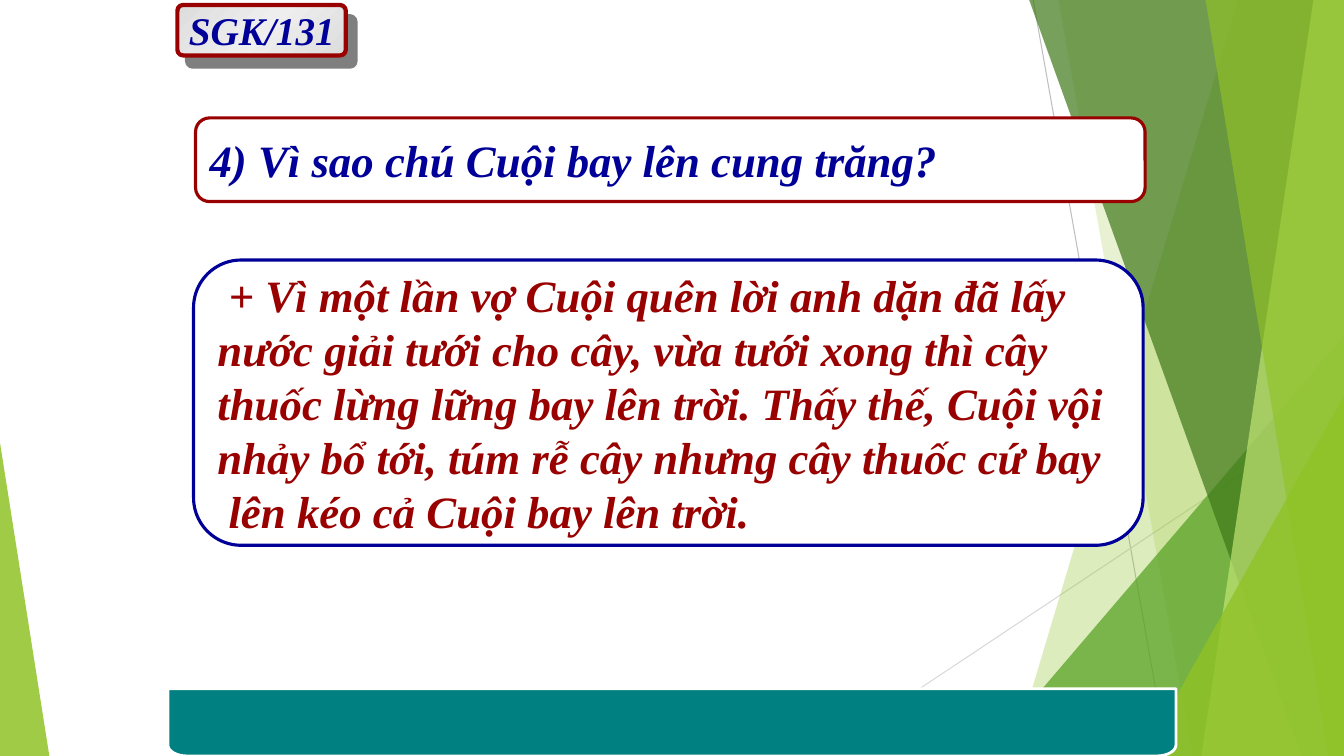
from dataclasses import dataclass
from math import cos, pi, sin
from typing import Optional, Union

from lxml.etree import SubElement
from pptx import Presentation
from pptx.dml.color import RGBColor as RGB
from pptx.enum.shapes import MSO_CONNECTOR as Link, MSO_SHAPE as Kind
from pptx.enum.text import MSO_ANCHOR as Anchor, PP_ALIGN as Align
from pptx.oxml import parse_xml
from pptx.oxml.ns import nsdecls, qn
from pptx.util import Inches, Pt

COLS, ROWS = 160, 90  # twelve cells to the inch


@dataclass(frozen=True)
class Theme:
    font: str = "Times New Roman"
    big: int = 32
    small: int = 28
    navy: str = "000099"
    red: str = "990000"
    teal: str = "008080"
    white: str = "FFFFFF"
    lime: str = "90C226"
    pale: str = "C0E474"
    green: str = "54A021"
    dark: str = "3F7819"
    rule: str = "BFBFBF"
    faint: str = "D9D9D9"
    silver: str = "DDDDDD"
    shine: str = "EEEEEE"
    black: str = "000000"


@dataclass(frozen=True)
class Ray:
    start: tuple[float, float]
    end: tuple[float, float]
    color: str


@dataclass(frozen=True)
class Band:
    """Reaches from a slanted edge to the right side of the slide."""
    top: float
    foot: float
    color: str
    alpha: int


@dataclass(frozen=True)
class Wedge:
    """Right triangle standing on the bottom of the slide."""
    left: float
    top: float
    width: float
    peak: int
    color: str
    alpha: int


@dataclass(frozen=True)
class Card:
    kind: Kind
    area: tuple[float, float, float, float]
    lines: tuple[str, ...]
    size: int
    ink: str
    edge: str
    weight: float
    round: Optional[float] = None


T = Theme()

RAYS = (
    Ray((123, 0), (139, ROWS), T.rule),
    Ray((COLS, 48.36), (97.44, ROWS), T.faint),
)

FACETS: tuple[Union[Band, Wedge], ...] = (
    Band(147.36, 120.48, T.lime, 30),
    Band(126, 141.96, T.lime, 20),
    Wedge(117.24, 39.96, 42.76, 1, T.green, 72),
    Band(122.52, 154.92, T.dark, 70),
    Band(156.36, 143.04, T.pale, 70),
    Band(143.52, 158.16, T.lime, 65),
    Wedge(136.08, 47.16, 23.92, 1, T.lime, 80),
    Wedge(0, 52.68, 5.88, 0, T.lime, 85),
)

ASK = Card(Kind.FLOWCHART_ALTERNATE_PROCESS, (23.28, 14.04, 113.04, 9.96),
           ("4) Vì sao chú Cuội bay lên cung trăng?",),
           T.big, T.navy, T.red, 2.25)
REPLY = Card(Kind.FLOWCHART_ALTERNATE_PROCESS, (23.04, 30.96, 113.04, 33.96),
             (" + Vì một lần vợ Cuội quên lời anh dặn đã lấy",
              "nước giải tưới cho cây, vừa tưới xong thì cây",
              "thuốc lừng lững bay lên trời. Thấy thế, Cuội vội",
              "nhảy bổ tới, túm rễ cây nhưng cây thuốc cứ bay",
              " lên kéo cả Cuội bay lên trời."),
             T.big, T.red, T.navy, 2.25)
TAG = Card(Kind.ROUNDED_RECTANGLE, (21.12, 0.6, 20.04, 6), ("SGK/131",),
           T.small, T.navy, T.red, 3, 0.11)

deck = Presentation()
deck.slide_width, deck.slide_height = Inches(13.33), Inches(7.5)
slide = deck.slides.add_slide(deck.slide_layouts[6])
shapes = slide.shapes


def col(n: float) -> int:
    return round(deck.slide_width * n / COLS)


def row(n: float) -> int:
    return round(deck.slide_height * n / ROWS)


def paint(shape, color: str, alpha: int = 100) -> None:
    shape.shadow.inherit = False
    shape.fill.solid()
    shape.fill.fore_color.rgb = RGB.from_string(color)
    if alpha < 100:
        tint = shape.fill._xPr.find(qn("a:solidFill"))[0]
        SubElement(tint, qn("a:alpha"), val=str(alpha * 1000))


def stroke(shape, color: str, weight: float) -> None:
    shape.line.color.rgb = RGB.from_string(color)
    shape.line.width = Pt(weight)


def outline(points: list[tuple[float, float]]):
    spots = [(col(x), row(y)) for x, y in points]
    pen = shapes.build_freeform(*spots[0])
    pen.add_line_segments(spots[1:], close=True)
    return pen.convert_to_shape()


def draw_ray(ray: Ray) -> None:
    (x, y), (u, v) = ray.start, ray.end
    line = shapes.add_connector(Link.STRAIGHT, col(x), row(y), col(u), row(v))
    stroke(line, ray.color, 0.75)
    SubElement(line._element.spPr, qn("a:effectLst"))


def draw_facet(facet: Union[Band, Wedge]) -> None:
    if isinstance(facet, Band):
        shape = outline([(facet.top, 0), (COLS, 0), (COLS, ROWS), (facet.foot, ROWS)])
    else:
        shape = shapes.add_shape(Kind.ISOSCELES_TRIANGLE, col(facet.left), row(facet.top),
                                 col(facet.width), row(ROWS - facet.top))
        shape.adjustments[0] = facet.peak
    paint(shape, facet.color, facet.alpha)
    shape.line.fill.background()


def draw_card(card: Card):
    x, y, w, h = card.area
    shape = shapes.add_shape(card.kind, col(x), row(y), col(w), row(h))
    if card.round is not None:
        shape.adjustments[0] = card.round
    paint(shape, T.white)
    stroke(shape, card.edge, card.weight)
    frame = shape.text_frame
    frame.word_wrap = False
    frame.vertical_anchor = Anchor.MIDDLE
    frame.text = "\n".join(card.lines)
    for para in frame.paragraphs:
        para.alignment = Align.LEFT
        font = para.font
        font.name, font.size = T.font, Pt(card.size)
        font.bold = font.italic = True
        font.color.rgb = RGB.from_string(card.ink)
    return shape


def draw_foot(left: float, top: float, width: float, rx: float, ry: float) -> None:
    turns = [pi / 2 * i / 8 for i in range(9)]
    right = left + width
    curve = [(rx * (1 - cos(a)), ROWS - ry * (1 - sin(a))) for a in turns]
    points = [(right, top), (left, top)]
    points += [(left + dx, y) for dx, y in curve]
    points += [(right - dx, y) for dx, y in reversed(curve)]
    shape = outline(points)
    paint(shape, T.teal)
    stroke(shape, T.white, 2)


def gloss(shape) -> None:
    """Three-stop gradient and a hard shadow."""
    stops = "".join(f'<a:gs pos="{pos}"><a:srgbClr val="{color}"/></a:gs>' for pos, color in
                    ((0, T.silver), (50000, T.shine), (100000, T.silver)))
    props = shape._element.spPr
    props.replace(props.find(qn("a:solidFill")), parse_xml(
        f'<a:gradFill {nsdecls("a")}><a:gsLst>{stops}</a:gsLst>'
        '<a:lin ang="2700000" scaled="1"/></a:gradFill>'))
    cast = SubElement(props.find(qn("a:effectLst")), qn("a:outerShdw"),
                      dist=str(Pt(10.6)), dir=str(49 * 60000), algn="ctr", rotWithShape="0")
    tint = SubElement(cast, qn("a:srgbClr"), val=T.black)
    SubElement(tint, qn("a:alpha"), val="50000")


# Backdrop
for ray in RAYS:
    draw_ray(ray)
for facet in FACETS:
    draw_facet(facet)

# Question, answer, footer and page tag
draw_card(ASK)
draw_card(REPLY)
draw_foot(20, 82, 120, 2.3, 1.3)
gloss(draw_card(TAG))

deck.save("out.pptx")
